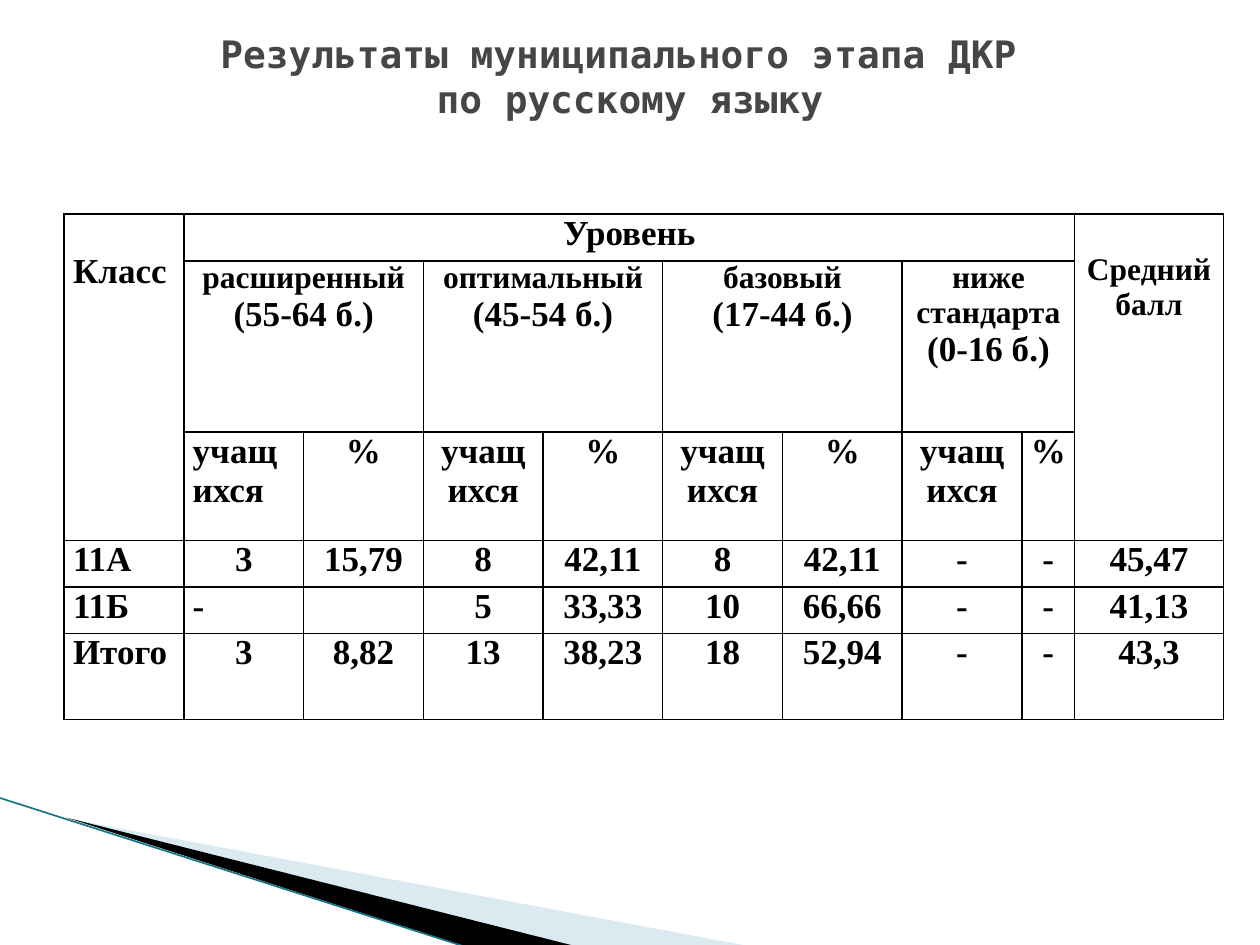
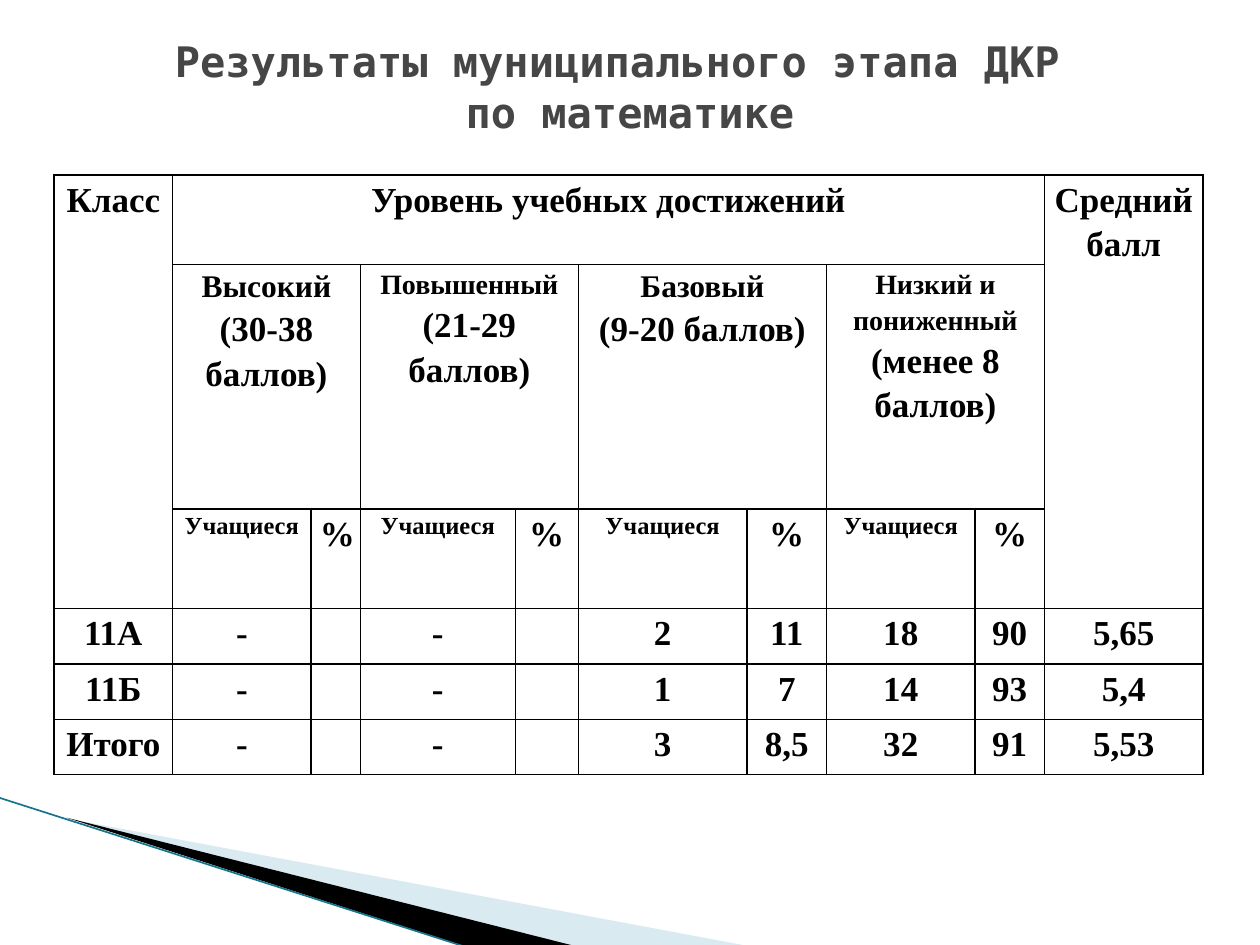
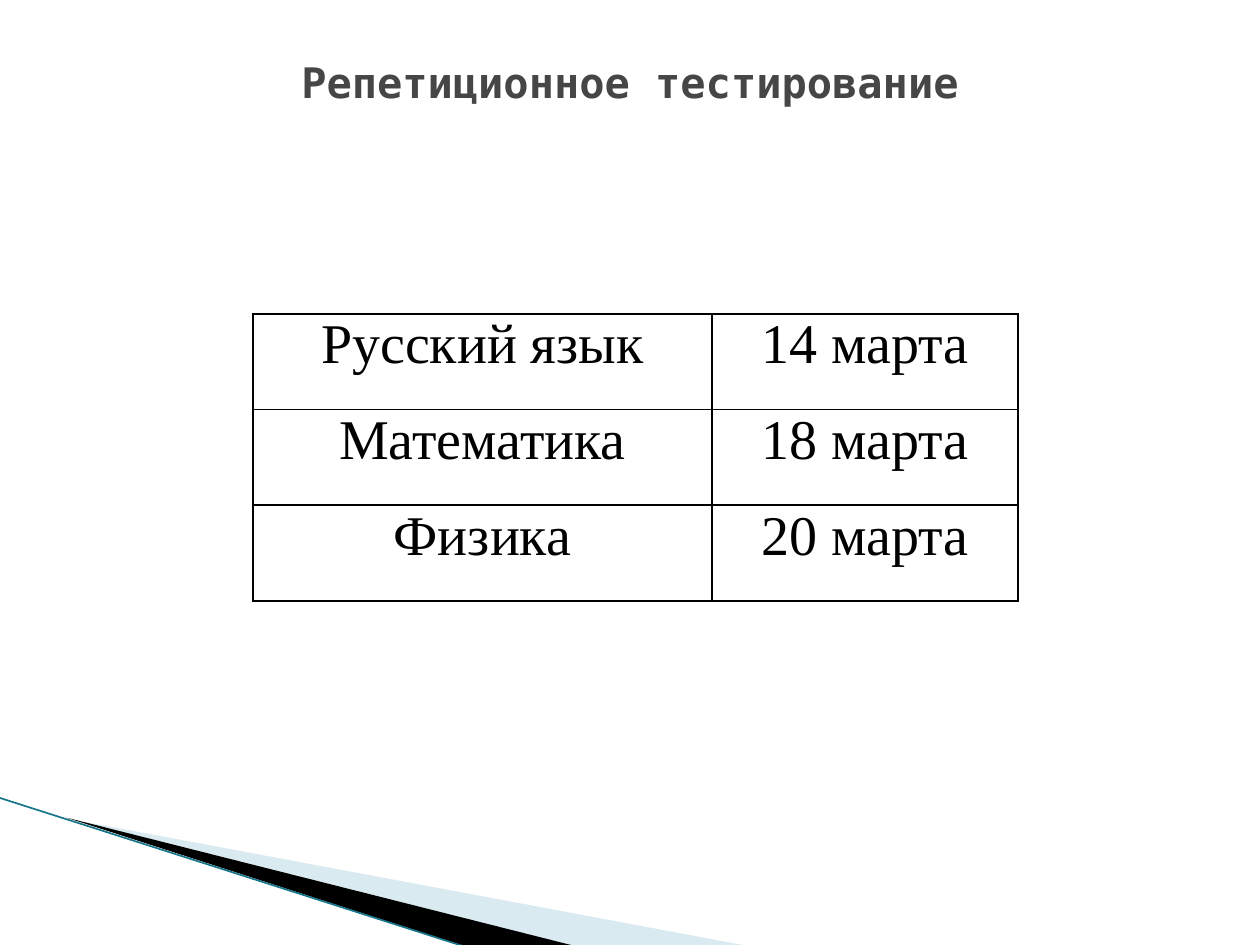
from lxml import etree
from pptx import Presentation
from pptx.dml.color import RGBColor
from pptx.enum.shapes import MSO_CONNECTOR
from pptx.enum.text import MSO_ANCHOR, PP_ALIGN
from pptx.oxml.ns import qn
from pptx.util import Inches, Pt

CENTER, LEFT = PP_ALIGN.CENTER, PP_ALIGN.LEFT
MIDDLE = MSO_ANCHOR.MIDDLE
STRAIGHT = MSO_CONNECTOR.STRAIGHT

COLORS = {"title": "464646", "text": "000000", "border": "000000", "paper": "FFFFFF",
          "pale": "A0CBDC", "dark": "000000", "edge": "16758A"}
TITLE_FONT, TABLE_FONT = "DejaVu Sans Mono", "Times New Roman"
TITLE_LEFT, TITLE_TOP, TITLE_WIDTH = 0.5, 0.3, 9
TITLE_ONLY = 5


def rgb(name):
    return RGBColor.from_string(COLORS[name])


def add_run(p, text, font, size, color, bold):
    r = p.add_run()
    r.text = text
    r.font.name, r.font.size, r.font.bold = font, Pt(size), bold
    r.font.color.rgb = rgb(color)


def add_wedge(s, points, color, opacity=None):
    """Filled outline without a line; opacity in percent."""
    start, *rest = [(Inches(x), Inches(y)) for x, y in points]
    builder = s.shapes.build_freeform(*start)
    builder.add_line_segments(rest, close=True)
    sp = builder.convert_to_shape()
    sp.shadow.inherit = False
    sp.fill.solid()
    sp.fill.fore_color.rgb = rgb(color)
    sp.line.fill.background()
    if opacity:
        clr = sp.fill._xPr.find(".//" + qn("a:srgbClr"))
        etree.SubElement(clr, qn("a:alpha"), val=str(opacity * 1000))


def add_corner(s):
    """Wedges and edge line in the lower left corner."""
    add_wedge(s, [(0.55, 6.5), (5.95, 7.51), (4.56, 7.51)], "pale", 40)
    add_wedge(s, [(0.53, 6.49), (4.57, 7.51), (3.72, 7.52)], "dark")
    edge = s.shapes.add_connector(STRAIGHT, Inches(-0.01), Inches(6.33),
                                  Inches(3.71), Inches(7.52))
    edge.line.color.rgb = rgb("edge")
    edge.line.width = Pt(0.95)
    etree.SubElement(edge._element.spPr, qn("a:effectLst"))


def add_title(s, lines, size, height):
    title = s.shapes.title
    title.left, title.top = Inches(TITLE_LEFT), Inches(TITLE_TOP)
    title.width, title.height = Inches(TITLE_WIDTH), Inches(height)
    tf = title.text_frame
    tf.word_wrap, tf.vertical_anchor = True, MIDDLE
    p = tf.paragraphs[0]
    p.alignment = CENTER
    for i, line in enumerate(lines):
        if i:
            p.add_line_break()
        add_run(p, line, TITLE_FONT, size, "title", True)


def new_slide(prs, title, size, height):
    s = prs.slides.add_slide(prs.slide_layouts[TITLE_ONLY])
    add_corner(s)
    add_title(s, title, size, height)
    return s


def add_borders(cell):
    tc_pr = cell._tc.get_or_add_tcPr()
    for i, side in enumerate(("lnL", "lnR", "lnT", "lnB")):
        ln = etree.Element(qn("a:" + side), w=str(Pt(1)))
        fill = etree.SubElement(ln, qn("a:solidFill"))
        etree.SubElement(fill, qn("a:srgbClr"), val=COLORS["border"])
        tc_pr.insert(i, ln)


def fill_cell(cell, content, size, bold, align, spacing):
    """Content is a string or a list of (text, size) paragraphs."""
    cell.margin_left = cell.margin_right = Inches(0.07)
    cell.margin_top = cell.margin_bottom = 0
    cell.fill.solid()
    cell.fill.fore_color.rgb = rgb("paper")
    add_borders(cell)
    if not content:
        return
    parts = [(content, size)] if isinstance(content, str) else content
    tf = cell.text_frame
    for i, (text, part_size) in enumerate(parts):
        p = tf.add_paragraph() if i else tf.paragraphs[0]
        p.alignment, p.line_spacing = align, spacing
        add_run(p, text, TABLE_FONT, part_size, "text", bold)


def add_grid(s, left, top, cols, heights, rows, size=20, bold=True,
             spacing=1.0, left_cells=()):
    table = s.shapes.add_table(len(rows), len(cols), Inches(left), Inches(top),
                               Inches(sum(cols)), Inches(sum(heights))).table
    table.first_row = table.horz_banding = False
    for col, width in zip(table.columns, cols):
        col.width = Inches(width)
    for row, height in zip(table.rows, heights):
        row.height = Inches(height)
    for r, row in enumerate(rows):
        for c, content in enumerate(row):
            align = LEFT if (r, c) in left_cells else CENTER
            fill_cell(table.cell(r, c), content, size, bold, align, spacing)
    return table


def add_results(s, left, top, cols, heights, heading, levels, pupils, mean, results, **style):
    """Three header rows (class, four levels, mean score) above the results."""
    level_row = [None]
    for level in levels:
        level_row += [level, None]
    rows = [["Класс", heading] + [None] * 7 + [mean],
            level_row + [None],
            [None] + [pupils, "%"] * 4 + [None]] + results
    table = add_grid(s, left, top, cols, heights, rows, **style)
    table.cell(0, 1).merge(table.cell(0, 8))
    for c in (0, 9):
        table.cell(0, c).merge(table.cell(2, c))
    for c in range(1, 9, 2):
        table.cell(1, c).merge(table.cell(1, c + 1))
    return table


def russian_slide(prs):
    s = new_slide(prs, ["Результаты муниципального этапа ДКР ", "по русскому языку"], 21.6, 0.61)
    levels = [[("расширенный", 18), ("(55-64 б.)", 20)],
              [("оптимальный", 18), ("(45-54 б.)", 20)],
              [("базовый", 18), ("(17-44 б.)", 20)],
              [("ниже стандарта", 18), ("(0-16 б.)", 20)]]
    results = [
        ["11А", "3", "15,79", "8", "42,11", "8", "42,11", "-", "-", "45,47"],
        ["11Б", "-", "", "5", "33,33", "10", "66,66", "-", "-", "41,13"],
        ["Итого", "3", "8,82", "13", "38,23", "18", "52,94", "-", "-", "43,3"]]
    table = add_results(s, 0.51, 1.7, [0.95] * 8 + [0.42, 1.18],
                        [0.37, 1.36, 0.86, 0.37, 0.37, 0.68], "Уровень", levels,
                        "учащихся", [("Средний балл", 18)], results,
                        left_cells={(0, 0), (2, 1), (3, 0), (4, 0), (4, 1), (5, 0)})
    for c in (0, 9):
        table.cell(0, c).margin_top = Inches(0.3)


def maths_slide(prs):
    s = new_slide(prs, ["Результаты муниципального этапа ДКР ", "по математике"], 24, 0.77)
    levels = [[("Высокий", 18), ("(30-38 баллов)", 20)],
              [("Повышенный", 16), ("(21-29 баллов)", 20)],
              [("Базовый", 18), ("(9-20 баллов)", 20)],
              [("Низкий и пониженный", 16), ("(менее 8 баллов)", 20)]]
    results = [
        ["11А", "-", "", "-", "", "2", "11", "18", "90", "5,65"],
        ["11Б", "-", "", "-", "", "1", "7", "14", "93", "5,4"],
        ["Итого", "-", "", "-", "", "3", "8,5", "32", "91", "5,53"]]
    add_results(s, 0.43, 1.39, [0.94, 1.1, 0.39, 1.23, 0.5, 1.34, 0.63, 1.18, 0.55, 1.26],
                [0.71, 1.94, 0.79] + [0.44] * 3, "Уровень учебных достижений", levels,
                [("Учащиеся", 14)], "Средний балл", results, spacing=1.15)


def rehearsal_slide(prs):
    s = new_slide(prs, ["Репетиционное тестирование"], 24, 0.69)
    dates = [["Русский язык", "14 марта"],
             ["Математика", "18 марта"],
             ["Физика", "20 марта"]]
    add_grid(s, 2.01, 2.49, [3.64, 2.43], [0.76] * 3, dates, size=32, bold=False)


def main():
    prs = Presentation()
    prs.slide_width, prs.slide_height = Inches(10), Inches(7.5)
    russian_slide(prs)
    maths_slide(prs)
    rehearsal_slide(prs)
    prs.save("out.pptx")


if __name__ == "__main__":
    main()
